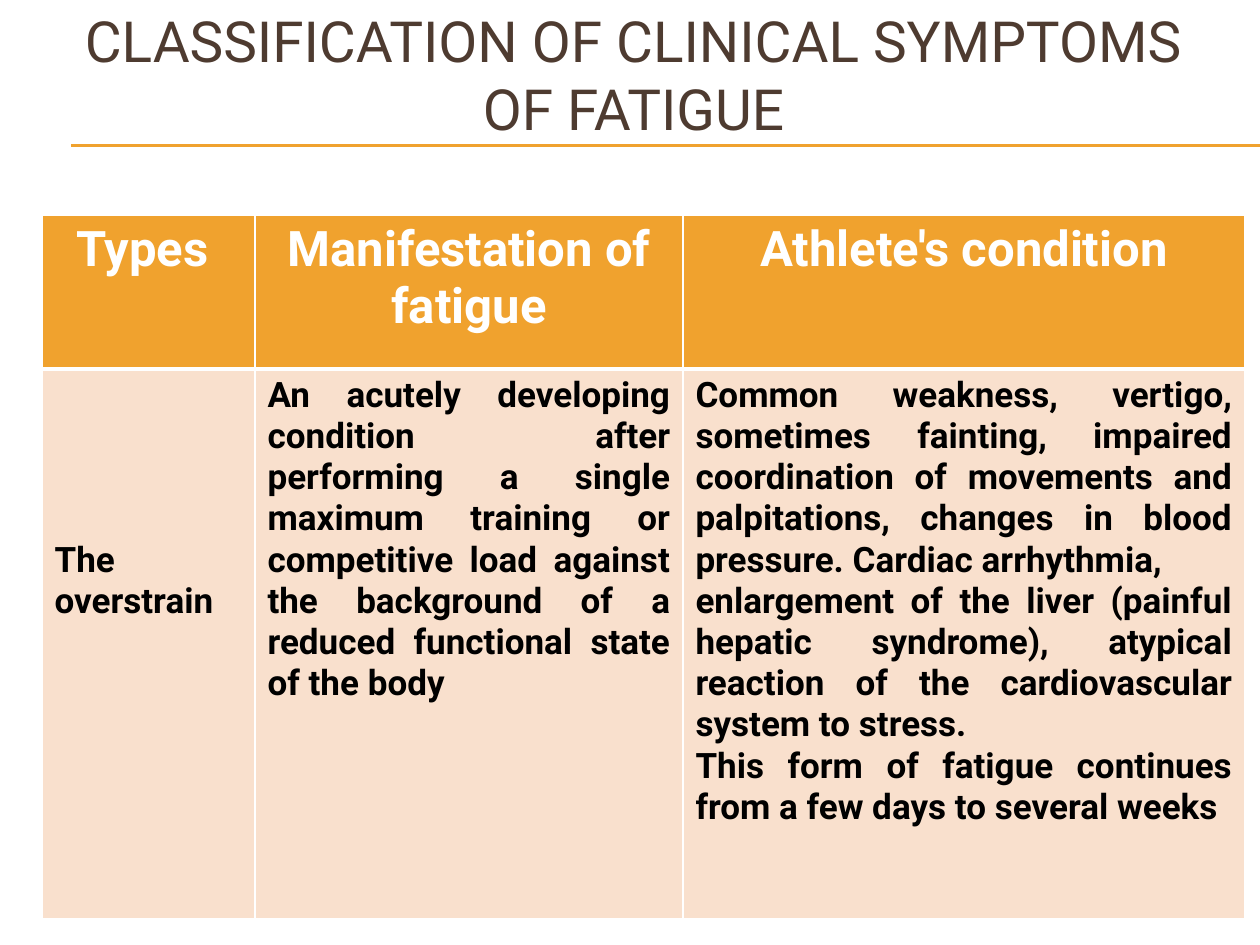
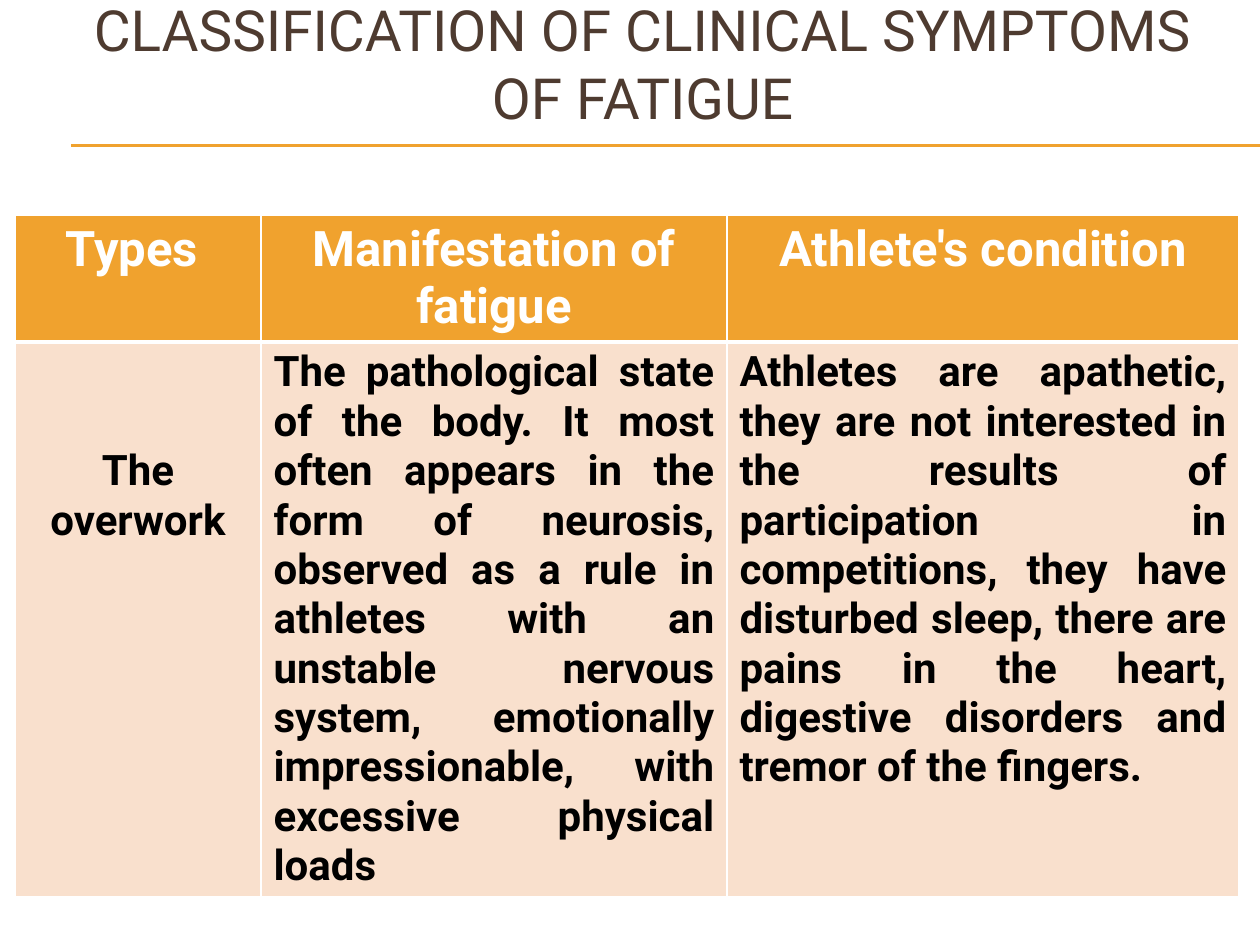
from lxml import etree
from pptx import Presentation
from pptx.dml.color import RGBColor
from pptx.enum.shapes import MSO_CONNECTOR
from pptx.enum.text import MSO_ANCHOR, MSO_AUTO_SIZE, PP_ALIGN
from pptx.oxml.ns import qn
from pptx.util import Emu, Pt

STRAIGHT = MSO_CONNECTOR.STRAIGHT
MIDDLE = MSO_ANCHOR.MIDDLE
NO_AUTOFIT = MSO_AUTO_SIZE.NONE
CENTER, JUSTIFY = PP_ALIGN.CENTER, PP_ALIGN.JUSTIFY

ORANGE = RGBColor(0xF0, 0xA2, 0x2E)
PEACH = RGBColor(0xF9, 0xE0, 0xCD)
BROWN = RGBColor(0x4E, 0x3B, 0x30)
WHITE = RGBColor(0xFF, 0xFF, 0xFF)
BLACK = RGBColor(0x00, 0x00, 0x00)

FONT = "Roboto"
EMU_PER_PX = 914400 / 126
SLIDE_WIDTH, SLIDE_HEIGHT = 1260, 945
TITLE_ONLY = 5
TITLE = "CLASSIFICATION OF CLINICAL SYMPTOMS OF FATIGUE"
TITLE_WIDTH, TITLE_HEIGHT = 1197, 116
RULE_LEFT = 71
RULE_TOPS = (145, 146)
TABLE_TOP = 215
CELL_MARGIN = 6
HEADINGS = ("Types ", "Manifestation of fatigue", "Athlete's condition")

OVERSTRAIN = {
    "title_at": (35, 16),
    "table_left": 42,
    "columns": (213, 428, 562),
    "rows": (154, 550),
    "size": 20,
    "type_align": JUSTIFY,
    "type_margin": 171,
    "texts": (
        ["The overstrain"],
        ["An acutely developing condition after performing a single maximum "
         "training or competitive load against the background of a reduced "
         "functional state of the body"],
        ["Common weakness, vertigo, sometimes fainting, impaired coordination "
         "of movements and palpitations, changes in blood pressure. "
         "Cardiac arrhythmia, ",
         "enlargement of the liver (painful hepatic syndrome), atypical "
         "reaction of the cardiovascular system to stress. ",
         "This form of fatigue continues from a few days to several weeks"],
    ),
}
OVERWORK = {
    "title_at": (44, 5),
    "table_left": 15,
    "columns": (246, 466, 512),
    "rows": (127, 555),
    "size": 24,
    "type_align": CENTER,
    "type_margin": 105,
    "texts": (
        ["The overwork"],
        ["The pathological state of the body. It most often appears in the "
         "form of neurosis, observed as a rule in athletes with an unstable "
         "nervous system, emotionally impressionable, with excessive "
         "physical loads"],
        ["Athletes are apathetic, they are not interested in the results of "
         "participation in competitions, they have disturbed sleep, there are "
         "pains in the heart, digestive disorders and tremor of the fingers."],
    ),
}


def px(length):
    return Emu(round(length * EMU_PER_PX))


def format_paragraph(paragraph, size, color, align, bold):
    paragraph.alignment = align
    font = paragraph.font
    font.name, font.size, font.bold = FONT, Pt(size), bold
    font.color.rgb = color


def add_title(slide, left, top):
    title = slide.shapes.title
    title.left, title.top = px(left), px(top)
    title.width, title.height = px(TITLE_WIDTH), px(TITLE_HEIGHT)
    frame = title.text_frame
    frame.text = TITLE
    frame.word_wrap = True
    frame.auto_size = NO_AUTOFIT
    frame.vertical_anchor = MIDDLE
    format_paragraph(frame.paragraphs[0], 32.4, BROWN, CENTER, False)


def add_title_rules(slide):
    for top in RULE_TOPS:
        rule = slide.shapes.add_connector(
            STRAIGHT, px(RULE_LEFT), px(top), px(SLIDE_WIDTH), px(top))
        rule.line.color.rgb = ORANGE
        rule.line.width = Pt(0.75)
        etree.SubElement(rule._element.spPr, qn("a:effectLst"))


def set_borders(cell, top, bottom):
    properties = cell._tc.get_or_add_tcPr()
    widths = {"lnL": 1, "lnR": 1, "lnT": top, "lnB": bottom}
    for position, (side, width) in enumerate(widths.items()):
        border = etree.Element(qn(f"a:{side}"), w=str(Pt(width)))
        fill = etree.SubElement(border, qn("a:solidFill"))
        etree.SubElement(fill, qn("a:srgbClr"), val=str(WHITE))
        properties.insert(position, border)


def fill_cell(cell, texts, fill, size, color, align):
    cell.fill.solid()
    cell.fill.fore_color.rgb = fill
    cell.margin_top = cell.margin_bottom = px(CELL_MARGIN)
    cell.text = "\n".join(texts)
    for paragraph in cell.text_frame.paragraphs:
        format_paragraph(paragraph, size, color, align, True)


def add_symptom_table(slide, content):
    columns, rows = content["columns"], content["rows"]
    table = slide.shapes.add_table(
        len(rows), len(columns), px(content["table_left"]), px(TABLE_TOP),
        px(sum(columns)), px(sum(rows))).table
    for row, height in zip(table.rows, rows):
        row.height = px(height)
    for index, width in enumerate(columns):
        table.columns[index].width = px(width)
        heading, body = table.cell(0, index), table.cell(1, index)
        fill_cell(heading, [HEADINGS[index]], ORANGE, 28, WHITE, CENTER)
        set_borders(heading, 1, 3)
        align = JUSTIFY if index else content["type_align"]
        fill_cell(body, content["texts"][index], PEACH, content["size"],
                  BLACK, align)
        set_borders(body, 3, 1)
    table.cell(1, 0).margin_top = px(content["type_margin"])


def add_symptom_slide(presentation, content):
    slide = presentation.slides.add_slide(presentation.slide_layouts[TITLE_ONLY])
    add_title_rules(slide)
    add_title(slide, *content["title_at"])
    add_symptom_table(slide, content)


def main():
    presentation = Presentation()
    presentation.slide_width = px(SLIDE_WIDTH)
    presentation.slide_height = px(SLIDE_HEIGHT)
    for content in (OVERSTRAIN, OVERWORK):
        add_symptom_slide(presentation, content)
    presentation.save("out.pptx")


if __name__ == "__main__":
    main()
